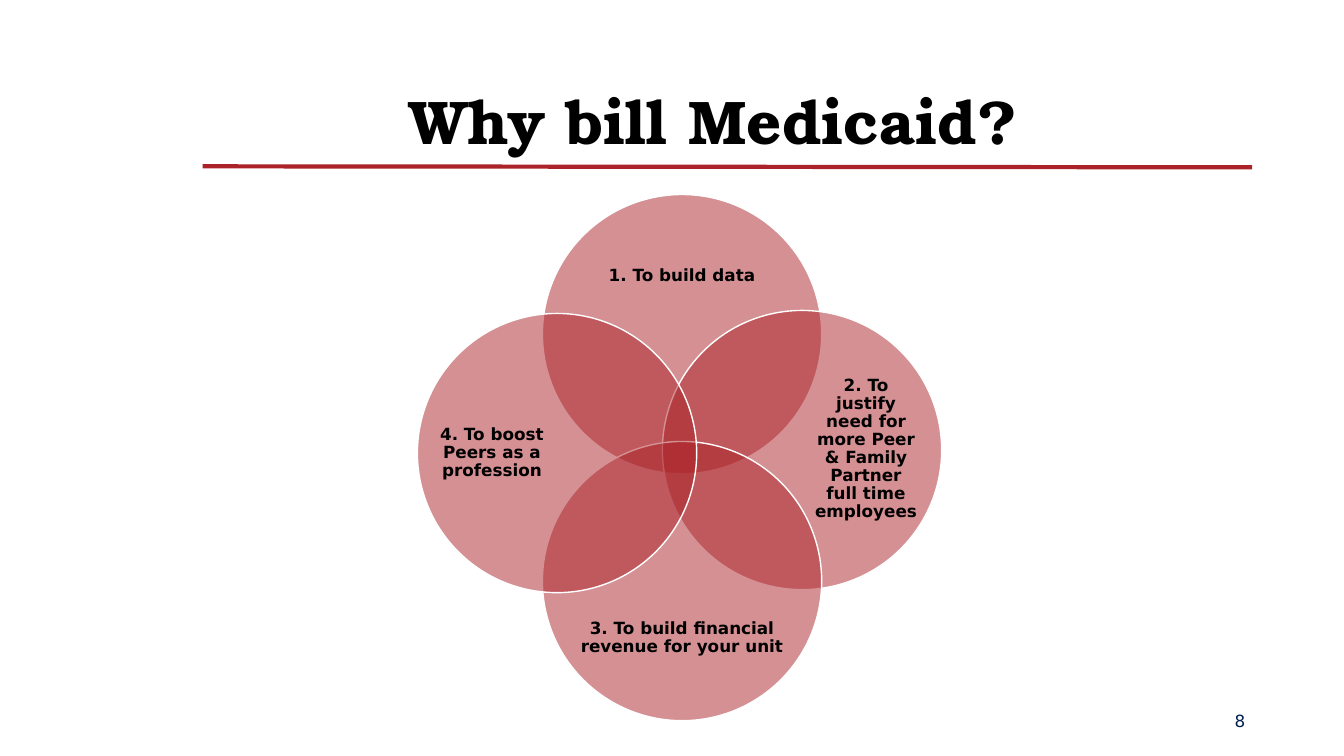
"""Build the "Why bill Medicaid?" slide: a four-circle Venn diagram under a ruled title."""
from lxml import etree
from pptx import Presentation
from pptx.dml.color import RGBColor
from pptx.enum.shapes import MSO_CONNECTOR as CONN, MSO_SHAPE as SHAPE
from pptx.enum.text import MSO_ANCHOR as ANCHOR, PP_ALIGN as ALIGN
from pptx.oxml.ns import qn
from pptx.util import Inches, Pt

RED, WHITE, BLACK, NAVY = "AB2328", "FFFFFF", "000000", "022151"
DIAMETER = 2.77


def color(value):
    return RGBColor.from_string(value)


def add_text(text, left, top, width, height, size=12, font="DejaVu Sans", ink=BLACK,
             bold=True, align=ALIGN.CENTER, anchor=ANCHOR.MIDDLE, inset=(0, 0), spacing=1.0, after=0):
    sp = s.shapes.add_textbox(Inches(left), Inches(top), Inches(width), Inches(height))
    tf = sp.text_frame
    tf.word_wrap = True
    tf.vertical_anchor = anchor
    tf.margin_left = tf.margin_right = Inches(inset[0])
    tf.margin_top = tf.margin_bottom = Inches(inset[1])
    p = tf.paragraphs[0]
    p.alignment, p.line_spacing, p.space_after = align, spacing, Pt(after)
    r = p.add_run()
    r.text = text
    r.font.size, r.font.name, r.font.bold = Pt(size), font, bold
    r.font.color.rgb = color(ink)


prs = Presentation()
prs.slide_width, prs.slide_height = Inches(13.33), Inches(7.5)
s = prs.slides.add_slide(prs.slide_layouts[6])

rule = s.shapes.add_connector(CONN.STRAIGHT, Inches(2.01), Inches(1.65), Inches(12.42), Inches(1.66))
rule.line.color.rgb = color(RED)
rule.line.width = Pt(3)
etree.SubElement(rule._element.spPr, qn("a:effectLst"))

add_text("Why bill Medicaid?", 3.18, 0.15, 7.8, 1.45, size=44, font="TeX Gyre Bonum",
         anchor=ANCHOR.BOTTOM, inset=(0.07, 0.04))

WIDE, TALL = (2.13, 0.88), (1.06, 2.13)
reasons = [
    ("1. To build data", (5.38, 1.93), (5.7, 2.3), WIDE),
    ("2. To justify need for more Peer & Family Partner full time employees", (6.57, 3.08), (8.06, 3.39), TALL),
    ("3. To build financial revenue for your unit", (5.38, 4.38), (5.7, 5.89), WIDE),
    ("4. To boost Peers as a profession", (4.14, 3.11), (4.35, 3.43), TALL),
]
for text, circle_at, label_at, label_size in reasons:
    left, top = circle_at
    sp = s.shapes.add_shape(SHAPE.OVAL, Inches(left), Inches(top), Inches(DIAMETER), Inches(DIAMETER))
    sp.shadow.inherit = False
    sp.fill.solid()
    sp.fill.fore_color.rgb = color(RED)
    fill = sp._element.spPr.find(qn("a:solidFill"))
    etree.SubElement(fill[0], qn("a:alpha"), val="50000")
    sp.line.color.rgb = color(WHITE)
    sp.line.width = Pt(1)
    add_text(text, *label_at, *label_size, spacing=0.9, after=4.2)

add_text("8", 10.67, 6.95, 1.75, 0.4, ink=NAVY, bold=False, align=ALIGN.RIGHT,
         inset=(0.07, 0.04), after=4.5)

prs.save("out.pptx")
